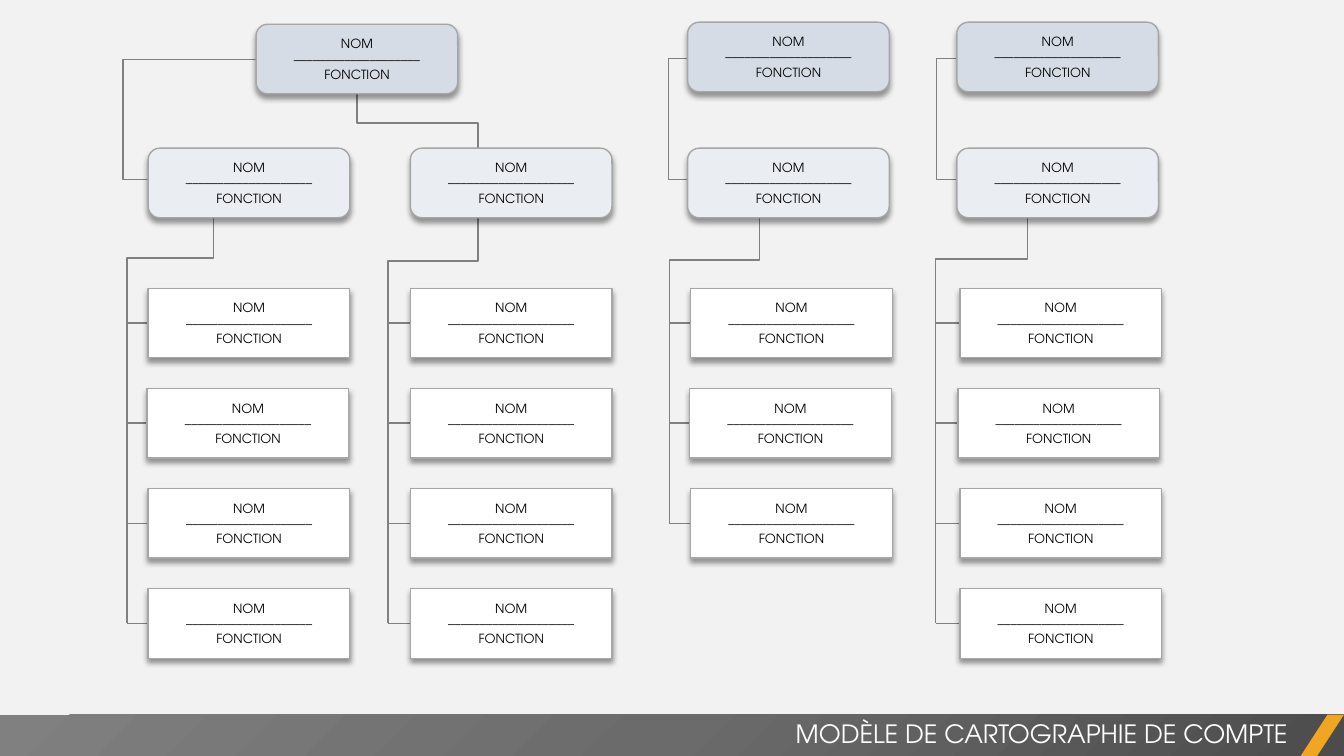
import pptx
import pptx.dml.color
import pptx.enum.shapes
import pptx.enum.text
import pptx.oxml
import pptx.oxml.ns
import pptx.util
from lxml import etree

Inches = pptx.util.Inches
Pt = pptx.util.Pt
qn = pptx.oxml.ns.qn
SHAPES = pptx.enum.shapes.MSO_SHAPE
CONNECTORS = pptx.enum.shapes.MSO_CONNECTOR
ALIGN = pptx.enum.text.PP_ALIGN
NAMESPACE = pptx.oxml.ns.nsdecls("a")

FONT = "TeX Gyre Adventor"
COLORS = {
    "background": "F2F2F2",
    "accent": "F0A622",
    "title": "FFFFFF",
    "text": "000000",
    "link": "808080",
    "border": "A6A6A6",
    "head": "D6DCE5",
    "deputy": "EAEEF3",
    "member": "FFFFFF",
}
CARD_WIDTH, CARD_HEIGHT = 2, 0.69
CARD_LINES = ("NOM", "–" * 20, "FONCTION")
DEPUTY_TOP = 1.47
MEMBER_TOP, MEMBER_STEP = 2.86, 2.98 / 3
BRANCH_LENGTH = 0.66

HEADS = [(2.54, 0.24), (6.82, 0.22), (9.49, 0.22)]
# nudge: how far the second member sits to the left of the others
TEAMS = [
    {"deputy": 1.47, "member": 1.47, "nudge": 0.01, "members": 4,
     "stem": 2.12, "trunk": 1.26, "bend": 2.56},
    {"deputy": 4.07, "member": 4.07, "nudge": 0, "members": 4,
     "stem": 4.74, "trunk": 3.85, "bend": 2.59},
    {"deputy": 6.82, "member": 6.85, "nudge": 0.01, "members": 3,
     "stem": 7.53, "trunk": 6.64, "bend": 2.58},
    {"deputy": 9.49, "member": 9.52, "nudge": 0.02, "members": 4,
     "stem": 10.19, "trunk": 9.28, "bend": 2.57},
]
# start, end and x of the vertical run
SIDE_LINKS = [
    ((2.74, 0.59), (1.49, 1.78), 1.22),
    ((7.86, 0.58), (6.86, 1.78), 6.63),
    ((10.53, 0.58), (9.53, 1.78), 9.29),
]


def rgb(name):
    return pptx.dml.color.RGBColor.from_string(COLORS[name])


def set_fill(target, color):
    target.fill.solid()
    target.fill.fore_color.rgb = rgb(color)


def add_plain_shape(slide, preset, left, top, width, height):
    shape = slide.shapes.add_shape(
        preset, Inches(left), Inches(top), Inches(width), Inches(height))
    shape.shadow.inherit = False
    shape.line.fill.background()
    return shape


def write_line(paragraph, text, size, color, align):
    paragraph.alignment = align
    run = paragraph.add_run()
    run.text = text
    for name, value in {"name": FONT, "size": Pt(size)}.items():
        setattr(run.font, name, value)
    run.font.color.rgb = rgb(color)


def add_link(slide, kind, start, end):
    link = slide.shapes.add_connector(
        kind, *(Inches(value) for value in (*start, *end)))
    link.line.color.rgb = rgb("link")
    link.line.width = Pt(1)
    etree.SubElement(link._element.spPr, qn("a:effectLst"))
    return link


def set_bend(link, share):
    """Put the bend at a share of the way from start to end."""
    adjustments = link._element.spPr.find(qn("a:prstGeom")).get_or_add_avLst()
    etree.SubElement(adjustments, qn("a:gd"), name="adj1",
                     fmla=f"val {round(share * 100000)}")


def add_side_link(slide, start, end, bend_x):
    """Leave sideways, run down at bend_x, then come back in."""
    link = add_link(slide, CONNECTORS.ELBOW, start, end)
    set_bend(link, (bend_x - start[0]) / (end[0] - start[0]))


def add_down_link(slide, start, end, bend_y):
    """Go down, cross over at bend_y, then go down again.

    An elbow starts sideways by nature, so it is laid flat and turned.
    """
    (x1, y1), (x2, y2) = start, end
    mid_x, mid_y = (x1 + x2) / 2, (y1 + y2) / 2
    half_cross = abs(x2 - x1) / 2
    half_drop = (y2 - y1) / 2
    side = -1 if x2 < x1 else 1
    link = add_link(slide, CONNECTORS.ELBOW,
                    (mid_x + side * half_drop, mid_y - half_cross),
                    (mid_x - side * half_drop, mid_y + half_cross))
    degrees = 90 if side < 0 else 270
    link._element.spPr.find(qn("a:xfrm")).set("rot", str(degrees * 60000))
    set_bend(link, (bend_y - y1) / (y2 - y1))


def add_card(slide, preset, left, top, color):
    card = add_plain_shape(slide, preset, left, top, CARD_WIDTH, CARD_HEIGHT)
    set_fill(card, color)
    card.line.color.rgb = rgb("border")
    card.line.width = Pt(1)
    card._element.spPr.find(qn("a:effectLst")).append(pptx.oxml.parse_xml(
        f'<a:outerShdw {NAMESPACE} blurRad="{Pt(4)}" dist="{Pt(3)}" '
        'dir="5400000" algn="t" rotWithShape="0"><a:srgbClr val="000000">'
        '<a:alpha val="40000"/></a:srgbClr></a:outerShdw>'))
    frame = card.text_frame
    frame.word_wrap = True
    frame.vertical_anchor = pptx.enum.text.MSO_ANCHOR.MIDDLE
    for side in ("left", "top", "right", "bottom"):
        setattr(frame, f"margin_{side}", Inches(0.02))
    for index, text in enumerate(CARD_LINES):
        paragraph = frame.add_paragraph() if index else frame.paragraphs[0]
        write_line(paragraph, text, 9, "text", ALIGN.CENTER)


def add_title_bar(slide):
    bar = add_plain_shape(slide, SHAPES.RECTANGLE, 0, 7.09, 13.33, 0.41)
    stops = "".join(
        f'<a:gs pos="{share * 1000}"><a:srgbClr val="{color}"/></a:gs>'
        for share, color in ((0, "4C4C4C"), (50, "6B6B6B"), (100, "808080")))
    bar._element.spPr.find(qn("a:prstGeom")).addnext(pptx.oxml.parse_xml(
        f'<a:gradFill {NAMESPACE} rotWithShape="1"><a:gsLst>{stops}</a:gsLst>'
        '<a:path path="circle"><a:fillToRect l="100000" t="100000"/></a:path>'
        '</a:gradFill>'))

    stripe = add_plain_shape(slide, SHAPES.PARALLELOGRAM,
                             12.9, 7.09, 0.43, 0.41)
    stripe.adjustments[0] = 0.65
    set_fill(stripe, "accent")

    title = slide.shapes.add_textbox(
        Inches(5.25), Inches(7.08), Inches(7.62), Inches(0.4)).text_frame
    title.word_wrap = True
    title.auto_size = pptx.enum.text.MSO_AUTO_SIZE.SHAPE_TO_FIT_TEXT
    write_line(title.paragraphs[0], "MODÈLE DE CARTOGRAPHIE DE COMPTE",
               18, "title", ALIGN.RIGHT)


def add_team(slide, team):
    tops = [MEMBER_TOP + MEMBER_STEP * row for row in range(team["members"])]
    middles = [top + CARD_HEIGHT / 2 for top in tops]
    for middle in middles:
        add_link(slide, CONNECTORS.STRAIGHT, (team["trunk"], middle),
                 (team["trunk"] + BRANCH_LENGTH, middle))
    add_down_link(slide, (team["stem"], 1.85), (team["trunk"], middles[-1]),
                  team["bend"])
    add_card(slide, SHAPES.FLOWCHART_ALTERNATE_PROCESS,
             team["deputy"], DEPUTY_TOP, "deputy")
    for row, top in enumerate(tops):
        left = team["member"] - (team["nudge"] if row == 1 else 0)
        add_card(slide, SHAPES.RECTANGLE, left, top, "member")


def main():
    deck = pptx.Presentation()
    deck.slide_width, deck.slide_height = Inches(13.33), Inches(7.5)
    slide = deck.slides.add_slide(deck.slide_layouts[6])
    set_fill(slide.background, "background")
    add_title_bar(slide)
    for start, end, bend_x in SIDE_LINKS:
        add_side_link(slide, start, end, bend_x)
    add_down_link(slide, (3.54, 0.62), (4.74, 1.82), 1.22)
    for left, top in HEADS:
        add_card(slide, SHAPES.FLOWCHART_ALTERNATE_PROCESS, left, top, "head")
    for team in TEAMS:
        add_team(slide, team)
    deck.save("out.pptx")


if __name__ == "__main__":
    main()
